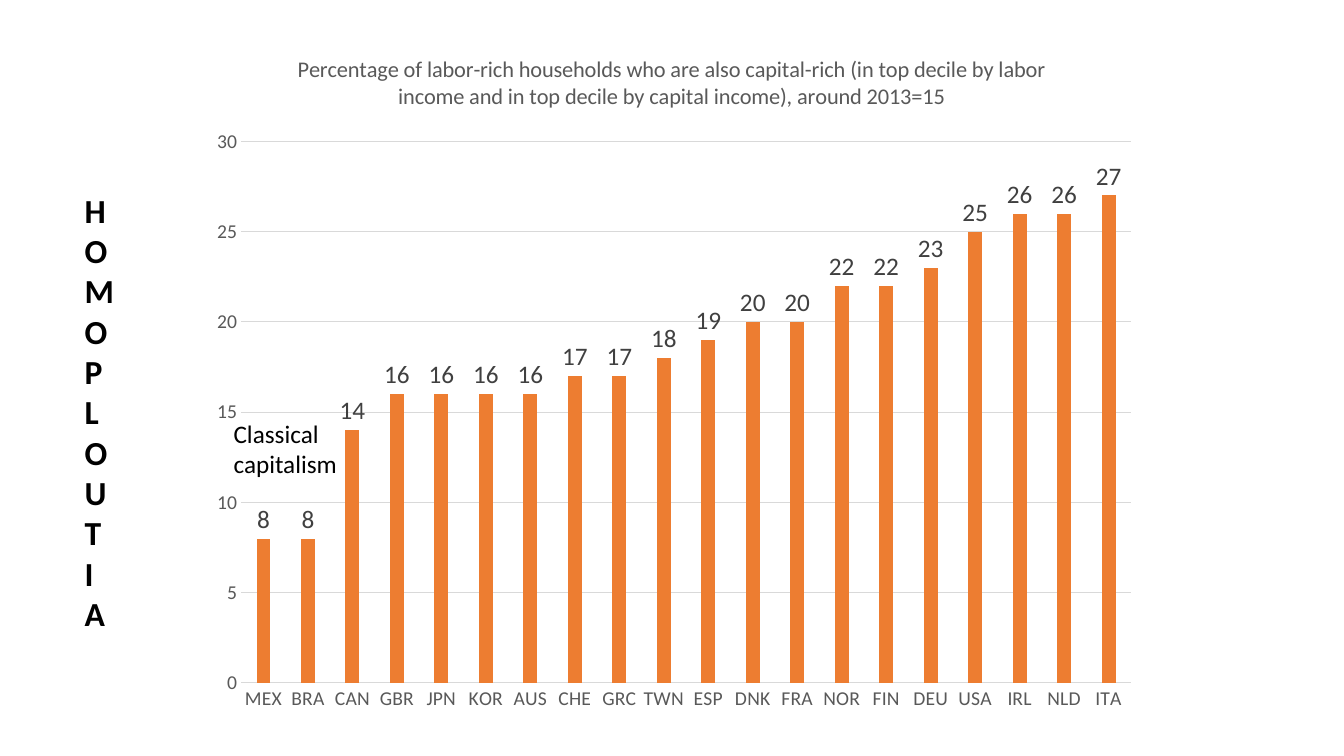
from dataclasses import dataclass

from lxml import etree
from pptx import Presentation
from pptx.chart import data
from pptx.dml.color import RGBColor
from pptx.enum import chart as charts, text
from pptx.oxml import ns
from pptx.util import Pt


@dataclass(frozen=True)
class Theme:
    font: str = "Calibri"
    ink: str = "000000"
    muted: str = "595959"
    label: str = "404040"
    grid: str = "D9D9D9"
    bar: str = "ED7D31"
    head: int = 24
    body: int = 18
    title: int = 16
    axis: int = 14


def style(font, theme, size, color, bold=False):
    font.name, font.size, font.bold = theme.font, Pt(size), bold
    font.color.rgb = RGBColor.from_string(color)


def write(frame, words, theme, size, color, bold=False):
    """Put one paragraph per line of words into the frame."""
    frame.text = words
    for para in frame.paragraphs:
        para.alignment = text.PP_ALIGN.LEFT
        para.line_spacing = 1.0
        para.space_before = Pt(0)
        for run in para.runs:
            style(run.font, theme, size, color, bold)


class Page:
    def __init__(self, deck, theme):
        self.theme = theme
        self.slide = deck.slides.add_slide(deck.slide_layouts[5])

    def place(self, shape, box):
        shape.left, shape.top, shape.width, shape.height = map(Pt, box)
        frame = shape.text_frame
        frame.word_wrap = True
        frame.auto_size = text.MSO_AUTO_SIZE.NONE
        frame.vertical_anchor = text.MSO_ANCHOR.TOP
        return frame

    def title(self, words, box):
        frame = self.place(self.slide.shapes.title, box)
        write(frame, words, self.theme, self.theme.head, self.theme.ink, bold=True)

    def note(self, words, box):
        shape = self.slide.shapes.add_textbox(*map(Pt, box))
        write(self.place(shape, box), words, self.theme, self.theme.body, self.theme.ink)

    def line(self, form):
        form.line.color.rgb = RGBColor.from_string(self.theme.grid)
        form.line.width = Pt(0.75)

    def columns(self, head, shares, box, area):
        look = self.theme
        table = data.CategoryChartData(number_format="0")
        table.categories = list(shares)
        table.add_series("Series 1", shares.values())
        kind = charts.XL_CHART_TYPE.COLUMN_CLUSTERED
        chart = self.slide.shapes.add_chart(kind, *map(Pt, box), table).chart
        chart.has_legend = False
        chart.font.name = look.font

        # Heading
        frame = chart.chart_title.text_frame
        frame.text = head
        style(frame.paragraphs[0].runs[0].font, look, look.title, look.muted)
        chart.chart_title.include_in_layout = False

        # Axes
        cats, vals = chart.category_axis, chart.value_axis
        for axis in (cats, vals):
            axis.major_tick_mark = axis.minor_tick_mark = charts.XL_TICK_MARK.NONE
            style(axis.tick_labels.font, look, look.axis, look.muted)
        self.line(cats.format)
        self.line(vals.major_gridlines.format)
        vals.format.line.fill.background()
        vals.minimum_scale, vals.maximum_scale, vals.major_unit = 0, 30, 5

        # Bars and their values
        plot = chart.plots[0]
        plot.vary_by_categories = False
        plot.gap_width, plot.overlap = 219, -27
        bars = plot.series[0].format.fill
        bars.solid()
        bars.fore_color.rgb = RGBColor.from_string(look.bar)
        plot.has_data_labels = True
        labels = plot.data_labels
        labels.show_value = True
        labels.position = charts.XL_LABEL_POSITION.OUTSIDE_END
        labels.number_format, labels.number_format_is_linked = "0", False
        style(labels.font, look, look.body, look.label)

        # Plot area as shares of the chart
        zone = plot._element.getparent()
        for old in zone.findall(ns.qn("c:layout")):
            zone.remove(old)
        outer = etree.Element(ns.qn("c:layout"))
        zone.insert(0, outer)
        inner = etree.SubElement(outer, ns.qn("c:manualLayout"))
        rules = {"layoutTarget": "inner", "xMode": "edge", "yMode": "edge", **area}
        for tag, val in rules.items():
            etree.SubElement(inner, ns.qn("c:" + tag)).set("val", str(val))


SHARES = {
    "MEX": 8, "BRA": 8, "CAN": 14, "GBR": 16, "JPN": 16,
    "KOR": 16, "AUS": 16, "CHE": 17, "GRC": 17, "TWN": 18,
    "ESP": 19, "DNK": 20, "FRA": 20, "NOR": 22, "FIN": 22,
    "DEU": 23, "USA": 25, "IRL": 26, "NLD": 26, "ITA": 27,
}
HEAD = ("Percentage of labor-rich households who are also capital-rich "
        "(in top decile by labor income and in top decile by capital income), "
        "around 2013=15")


def main():
    deck = Presentation()
    deck.slide_width, deck.slide_height = Pt(960), Pt(540)
    page = Page(deck, Theme())
    page.title("\n".join("HOMOPLOUTIA"), (53.3, 131.8, 72, 326.9))
    page.columns(HEAD, SHARES, (138.2, 21.6, 683.3, 496.1),
                 {"x": 0.05, "y": 0.16, "w": 0.93, "h": 0.78})
    page.note("Classical capitalism", (159.8, 295.2, 93.6, 51.1))
    deck.save("out.pptx")


if __name__ == "__main__":
    main()
